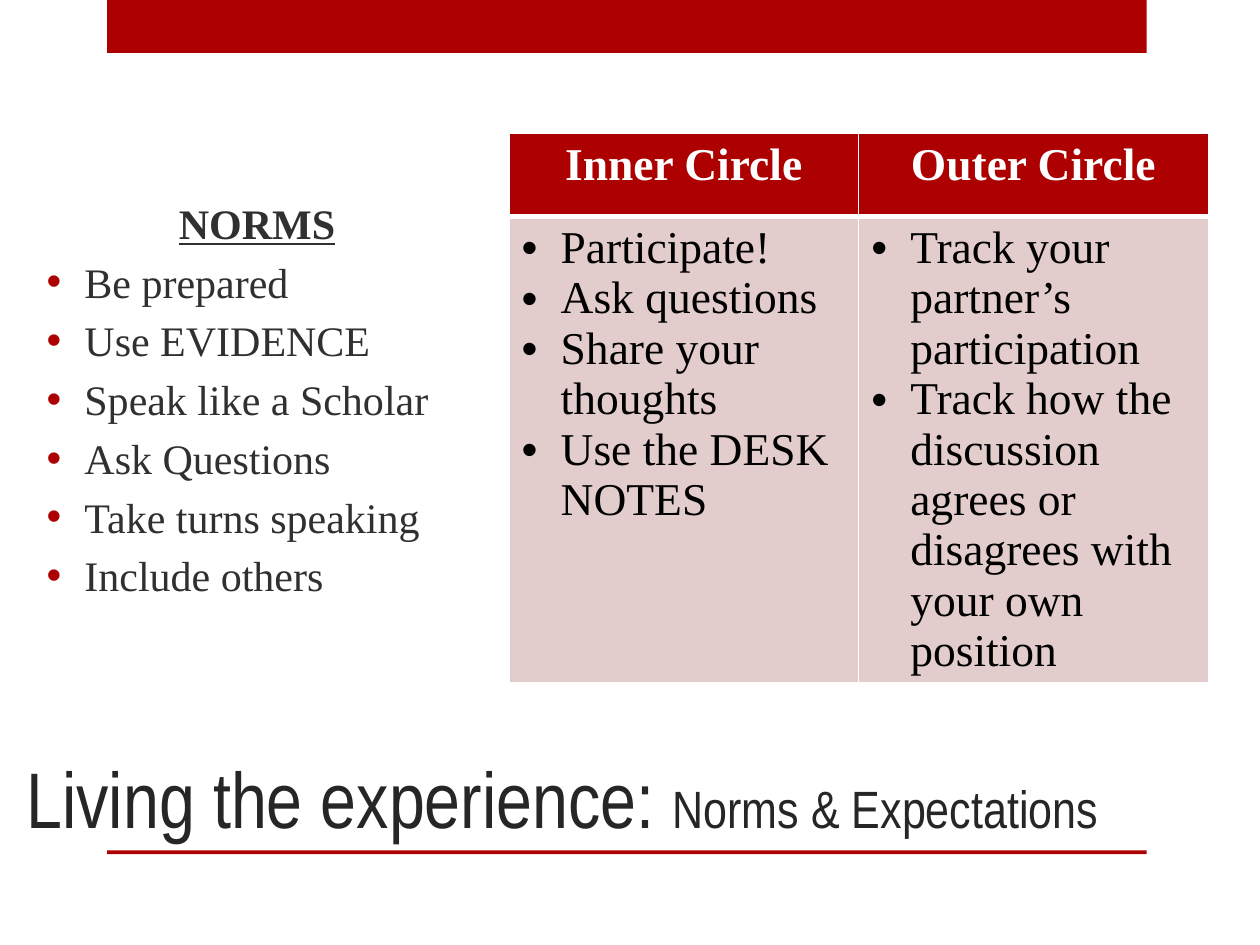
from lxml import etree
from pptx import Presentation
from pptx.dml.color import RGBColor
from pptx.enum.shapes import MSO_SHAPE
from pptx.enum.text import MSO_ANCHOR, MSO_AUTO_SIZE, PP_ALIGN
from pptx.oxml.ns import qn
from pptx.util import Inches, Pt

RED, WHITE, BLACK = "AD0101", "FFFFFF", "000000"
TITLE_GREY, BODY_GREY, PINK = "262626", "303030", "E3CCCC"
SERIF, NARROW = "Times New Roman", "Arial Narrow"

NORMS = ["Be prepared", "Use EVIDENCE", "Speak like a Scholar",
         "Ask Questions", "Take turns speaking", "Include others"]
CIRCLES = {
    "Inner Circle": ["Participate!", "Ask questions", "Share your thoughts",
                     "Use the DESK NOTES"],
    "Outer Circle": ["Track your partner’s participation",
                     "Track how the discussion agrees or disagrees with "
                     "your own position"],
}


def rgb(color):
    return RGBColor.from_string(color)


def add_text(paragraph, text, size, color, font=SERIF, bold=False,
             underline=False, align=PP_ALIGN.LEFT):
    paragraph.alignment = align
    run = paragraph.add_run()
    run.text = text
    run.font.name = font
    run.font.size = Pt(size)
    run.font.bold = bold
    run.font.underline = underline
    run.font.color.rgb = rgb(color)


def set_bullet(paragraph, indent, color=None):
    """Give the paragraph a hanging bullet, or none when indent is 0."""
    properties = paragraph._p.get_or_add_pPr()
    properties.set("marL", str(Inches(indent)))
    properties.set("indent", str(-Inches(indent)))
    if not indent:
        etree.SubElement(properties, qn("a:buNone"))
        return
    if color:
        bullet_color = etree.SubElement(properties, qn("a:buClr"))
        etree.SubElement(bullet_color, qn("a:srgbClr"), val=color)
    etree.SubElement(properties, qn("a:buFont"), typeface="Arial")
    etree.SubElement(properties, qn("a:buChar"), char="•")


def get_paragraph(frame, index):
    return frame.add_paragraph() if index else frame.paragraphs[0]


def place(shape, left, top, width, height):
    shape.left, shape.top = Inches(left), Inches(top)
    shape.width, shape.height = Inches(width), Inches(height)


def add_bar(slide, left, top, width, height):
    bar = slide.shapes.add_shape(MSO_SHAPE.RECTANGLE, Inches(left), Inches(top),
                                 Inches(width), Inches(height))
    bar.shadow.inherit = False
    bar.fill.solid()
    bar.fill.fore_color.rgb = rgb(RED)
    bar.line.fill.background()


def format_placeholder(shape, box, anchor):
    place(shape, *box)
    frame = shape.text_frame
    frame.word_wrap = True
    frame.auto_size = MSO_AUTO_SIZE.NONE
    frame.vertical_anchor = anchor
    return frame


def fill_title(shape, *box):
    frame = format_placeholder(shape, box, MSO_ANCHOR.BOTTOM)
    paragraph = frame.paragraphs[0]
    add_text(paragraph, "Living the experience: ", 45, TITLE_GREY, font=NARROW)
    add_text(paragraph, "Norms & Expectations", 30, TITLE_GREY, font=NARROW)


def fill_norms(shape, *box):
    frame = format_placeholder(shape, box, MSO_ANCHOR.MIDDLE)
    heading = frame.paragraphs[0]
    set_bullet(heading, 0)
    add_text(heading, "NORMS", 24, BODY_GREY, bold=True, underline=True,
             align=PP_ALIGN.CENTER)
    for norm in NORMS:
        paragraph = frame.add_paragraph()
        set_bullet(paragraph, 0.3, RED)
        add_text(paragraph, norm, 24, BODY_GREY)


def format_cell(cell, fill, top, bottom):
    """Set white borders (widths in points) and the cell's fill."""
    properties = cell._tc.get_or_add_tcPr()
    for side, width in (("L", 1), ("R", 1), ("T", top), ("B", bottom)):
        line = etree.SubElement(properties, qn(f"a:ln{side}"), w=str(Pt(width)))
        line_fill = etree.SubElement(line, qn("a:solidFill"))
        etree.SubElement(line_fill, qn("a:srgbClr"), val=WHITE)
    cell.fill.solid()
    cell.fill.fore_color.rgb = rgb(fill)


def add_circle_table(slide, left, top, width, height, header_height=0.66):
    table = slide.shapes.add_table(2, len(CIRCLES), Inches(left), Inches(top),
                                   Inches(width), Inches(height)).table
    table.rows[0].height = Inches(header_height)
    table.rows[1].height = Inches(height - header_height)
    for column, (name, duties) in enumerate(CIRCLES.items()):
        header, body = table.cell(0, column), table.cell(1, column)
        format_cell(header, RED, top=1, bottom=3)
        add_text(header.text_frame.paragraphs[0], name, 26, WHITE, bold=True,
                 align=PP_ALIGN.CENTER)
        format_cell(body, PINK, top=3, bottom=1)
        for index, duty in enumerate(duties):
            paragraph = get_paragraph(body.text_frame, index)
            set_bullet(paragraph, 0.31)
            add_text(paragraph, duty, 26, BLACK)


def main():
    presentation = Presentation()
    presentation.slide_width = Inches(10)
    presentation.slide_height = Inches(7.5)
    slide = presentation.slides.add_slide(presentation.slide_layouts[1])

    # Red bars at the top and below the title
    add_bar(slide, 0.85, 0, 8.25, 0.42)
    add_bar(slide, 0.85, 6.75, 8.25, 0.03)

    # Norms, table of circles and title
    fill_norms(slide.placeholders[1], 0.27, 1.4, 3.54, 3.53)
    add_circle_table(slide, 4.04, 1.06, 5.55, 4.36)
    fill_title(slide.shapes.title, 0.11, 5, 9.77, 1.75)

    presentation.save("out.pptx")


if __name__ == "__main__":
    main()
